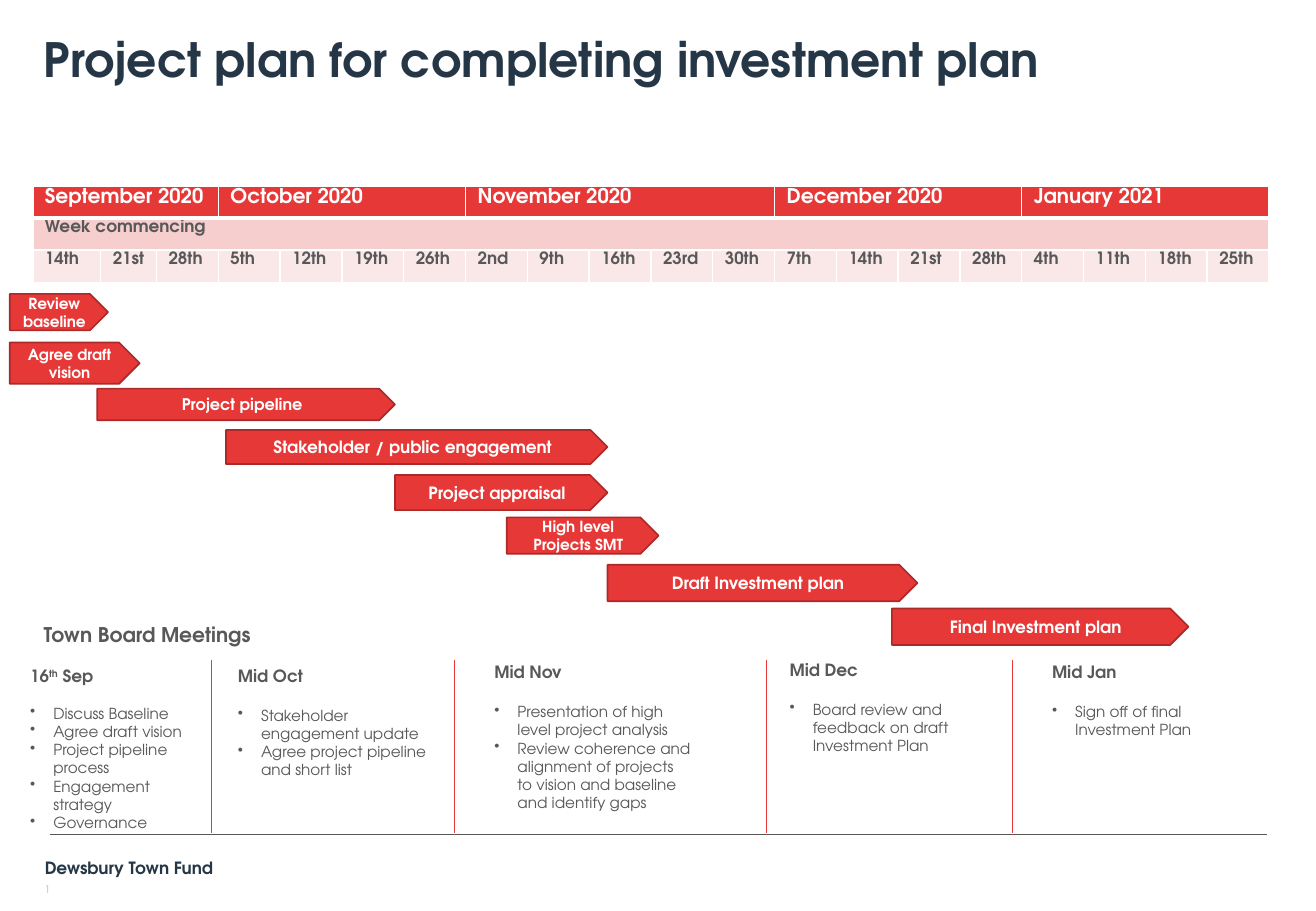
"""Build the project plan slide with its week table, task arrows and board meetings."""
from lxml import etree
from pptx import Presentation
from pptx.dml.color import RGBColor
from pptx.enum import shapes, text
from pptx.oxml import ns
from pptx.util import Inches, Pt

THEME = {
    "font": "TeX Gyre Adventor",
    "navy": "253746", "grey": "585858", "pale_blue": "AAB9CA", "white": "FFFFFF",
    "red": "E73838", "dark_red": "AB2929", "pink": "F6CECE", "pale_pink": "FAE8E8",
    "title": 28, "heading": 12, "label": 10, "pipeline": 9.5, "small": 9, "number": 6,
}
TITLE = ("Project plan for completing investment plan", (0.26, 0.25, 10.18, 0.46))
LABELS = [
    ("Dewsbury Town Fund", (0.27, 7.03, 6.05, 0.23), "label", "navy", True, "MIDDLE"),
    ("1", (0.27, 7.27, 2.43, 0.15), "number", "pale_blue", False, "MIDDLE"),
    ("Town Board Meetings", (0.26, 5.07, 2.01, 0.3), "heading", "grey", True, "TOP"),
]
CALENDAR = [
    ("September 2020", ["14th", "21st", "28th"]),
    ("October 2020", ["5th", "12th", "19th", "26th"]),
    ("November 2020", ["2nd", "9th", "16th", "23rd", "30th"]),
    ("December 2020", ["7th", "14th", "21st", "28th"]),
    ("January 2021", ["4th", "11th", "18th", "25th"]),
]
TABLE_BOX = (0.27, 1.53, 10.18, 0.8)
ROW_HEIGHT = 0.265
FIRST_WEEK_EXTRA = 0.05
TASKS = [
    ("Review baseline", (0.08, 2.42, 0.81, 0.3), "small"),
    ("Agree draft vision", (0.08, 2.82, 1.07, 0.34), "small"),
    ("Project pipeline", (0.8, 3.2, 2.45, 0.26), "pipeline"),
    ("Stakeholder / public engagement", (1.86, 3.54, 3.14, 0.28), "label"),
    ("Project appraisal", (3.25, 3.91, 1.75, 0.29), "label"),
    ("High level Projects SMT", (4.17, 4.26, 1.25, 0.3), "small"),
    ("Draft Investment plan", (5, 4.65, 2.55, 0.3), "label"),
    ("Final Investment plan", (7.34, 5.01, 2.44, 0.3), "label"),
]
MEETINGS = [
    (["16", "th", " Sep"], (0.15, 5.43, 1.49, 1.5), 10.8,
     ["Discuss Baseline", "Agree draft vision", "Project pipeline process",
      "Engagement strategy", "Governance"]),
    (["Mid Oct"], (1.86, 5.43, 1.88, 1.04), 12,
     ["Stakeholder engagement update", "Agree project pipeline and short list"]),
    (["Mid Nov"], (3.97, 5.4, 1.81, 1.82), 12,
     ["Presentation of high level project analysis",
      "Review coherence and alignment of projects to vision and baseline and identify gaps"]),
    (["Mid Dec"], (6.4, 5.38, 1.81, 0.89), 12,
     ["Board review and feedback on draft Investment Plan"]),
    (["Mid Jan"], (8.56, 5.4, 1.79, 0.74), 12, ["Sign off of final Investment Plan"]),
]
FOOTER_RULE = (0.41, 6.87, 10.43, 6.87)
DIVIDERS = [(x, 5.43, x, 6.86) for x in (1.74, 3.74, 6.31, 8.33)]


def colour(name):
    return RGBColor.from_string(THEME[name])


def inches(values):
    return [Inches(value) for value in values]


def set_values(target, **values):
    for name, value in values.items():
        setattr(target, name, value)


def style(font, size, tint, bold=True):
    set_values(font, name=THEME["font"], size=Pt(THEME[size]), bold=bold)
    font.color.rgb = colour(tint)


def write(frame, words, size, tint, bold=True, align="LEFT", anchor="TOP"):
    set_values(frame, word_wrap=True, auto_size=text.MSO_AUTO_SIZE.NONE,
               vertical_anchor=text.MSO_ANCHOR[anchor])
    paragraph = frame.paragraphs[0]
    paragraph.alignment = text.PP_ALIGN[align]
    for words_part in words:
        run = paragraph.add_run()
        run.text = words_part
        style(run.font, size, tint, bold)
        if words_part == "th":
            run.font.superscript = True if hasattr(run.font, "superscript") else None
            run._r.get_or_add_rPr().set("baseline", "30000")
    return paragraph


def add_line(slide, ends, tint, width):
    line = slide.shapes.add_connector(shapes.MSO_CONNECTOR.STRAIGHT, *inches(ends))
    line.line.color.rgb = colour(tint)
    line.line.width = Pt(width)
    etree.SubElement(line._element.spPr, ns.qn("a:effectLst"))


def add_bullet(frame, words, space_before):
    paragraph = frame.add_paragraph()
    properties = paragraph._p.get_or_add_pPr()
    properties.set("marL", str(Inches(0.19)))
    properties.set("indent", str(-Inches(0.19)))
    etree.SubElement(properties, ns.qn("a:buChar"), char="•")
    paragraph.space_before = Pt(space_before)
    run = paragraph.add_run()
    run.text = words
    style(run.font, "small", "grey", False)


def format_cell(cell, row):
    set_values(cell, margin_left=Inches(0.1), margin_right=Inches(0),
               margin_top=Inches(0.02), margin_bottom=Inches(0))
    properties = cell._tc.get_or_add_tcPr()
    thick_side = {0: "lnB", 1: "lnT"}.get(row)
    for side in ("lnL", "lnR", "lnT", "lnB"):
        width = Pt(3 if side == thick_side else 1)
        border = etree.SubElement(properties, ns.qn(f"a:{side}"), w=str(width))
        fill = etree.SubElement(border, ns.qn("a:solidFill"))
        etree.SubElement(fill, ns.qn("a:srgbClr"), val=THEME["white"])
    cell.fill.solid()
    cell.fill.fore_color.rgb = colour(("red", "pink", "pale_pink")[row])


def add_calendar(slide):
    weeks = [week for month, month_weeks in CALENDAR for week in month_weeks]
    table = slide.shapes.add_table(3, len(weeks), *inches(TABLE_BOX)).table
    set_values(table, first_row=False, horz_banding=False)
    week_width = TABLE_BOX[2] / len(weeks)
    for index, column in enumerate(table.columns):
        extra = {0: FIRST_WEEK_EXTRA, 1: -FIRST_WEEK_EXTRA}.get(index, 0)
        column.width = Inches(week_width + extra)
    for index, row in enumerate(table.rows):
        row.height = Inches(ROW_HEIGHT)
        for cell in row.cells:
            format_cell(cell, index)
            style(cell.text_frame.paragraphs[0].font, "label", "grey")
    entries = [(1, 0, len(weeks), "Week commencing", "label", "grey")]
    entries += [(2, index, 1, week, "label", "grey") for index, week in enumerate(weeks)]
    start = 0
    for month, month_weeks in CALENDAR:
        entries.append((0, start, len(month_weeks), month, "heading", "white"))
        start += len(month_weeks)
    for row, column, span, words, size, tint in entries:
        cell = table.cell(row, column)
        if span > 1:
            cell.merge(table.cell(row, column + span - 1))
        run = cell.text_frame.paragraphs[0].add_run()
        run.text = words
        style(run.font, size, tint)


def add_task(slide, words, box, size):
    arrow = slide.shapes.add_shape(shapes.MSO_SHAPE.PENTAGON, *inches(box))
    arrow.shadow.inherit = False
    arrow.fill.solid()
    arrow.fill.fore_color.rgb = colour("red")
    arrow.line.color.rgb = colour("dark_red")
    arrow.line.width = Pt(1)
    write(arrow.text_frame, [words], size, "white", align="CENTER", anchor="MIDDLE")


def main():
    presentation = Presentation()
    set_values(presentation, slide_width=Inches(10.83), slide_height=Inches(7.5))
    slide = presentation.slides.add_slide(presentation.slide_layouts[5])
    add_line(slide, FOOTER_RULE, "grey", 1)
    title = slide.shapes.title
    words, box = TITLE
    set_values(title, **dict(zip(("left", "top", "width", "height"), inches(box))))
    write(title.text_frame, [words], "title", "navy").line_spacing = 0.9
    for words, box, size, tint, bold, anchor in LABELS:
        frame = slide.shapes.add_textbox(*inches(box)).text_frame
        write(frame, [words], size, tint, bold, anchor=anchor)
        if size == "number":
            set_values(frame, margin_top=Inches(0), margin_bottom=Inches(0.04))
    add_calendar(slide)
    for task in TASKS:
        add_task(slide, *task)
    for divider in DIVIDERS:
        add_line(slide, divider, "red", 0.5)
    for heading, box, gap, points in MEETINGS:
        frame = slide.shapes.add_textbox(*inches(box)).text_frame
        write(frame, heading, "label", "grey")
        for index, point in enumerate(points):
            add_bullet(frame, point, 0 if index else gap)
    presentation.save("out.pptx")


if __name__ == "__main__":
    main()
